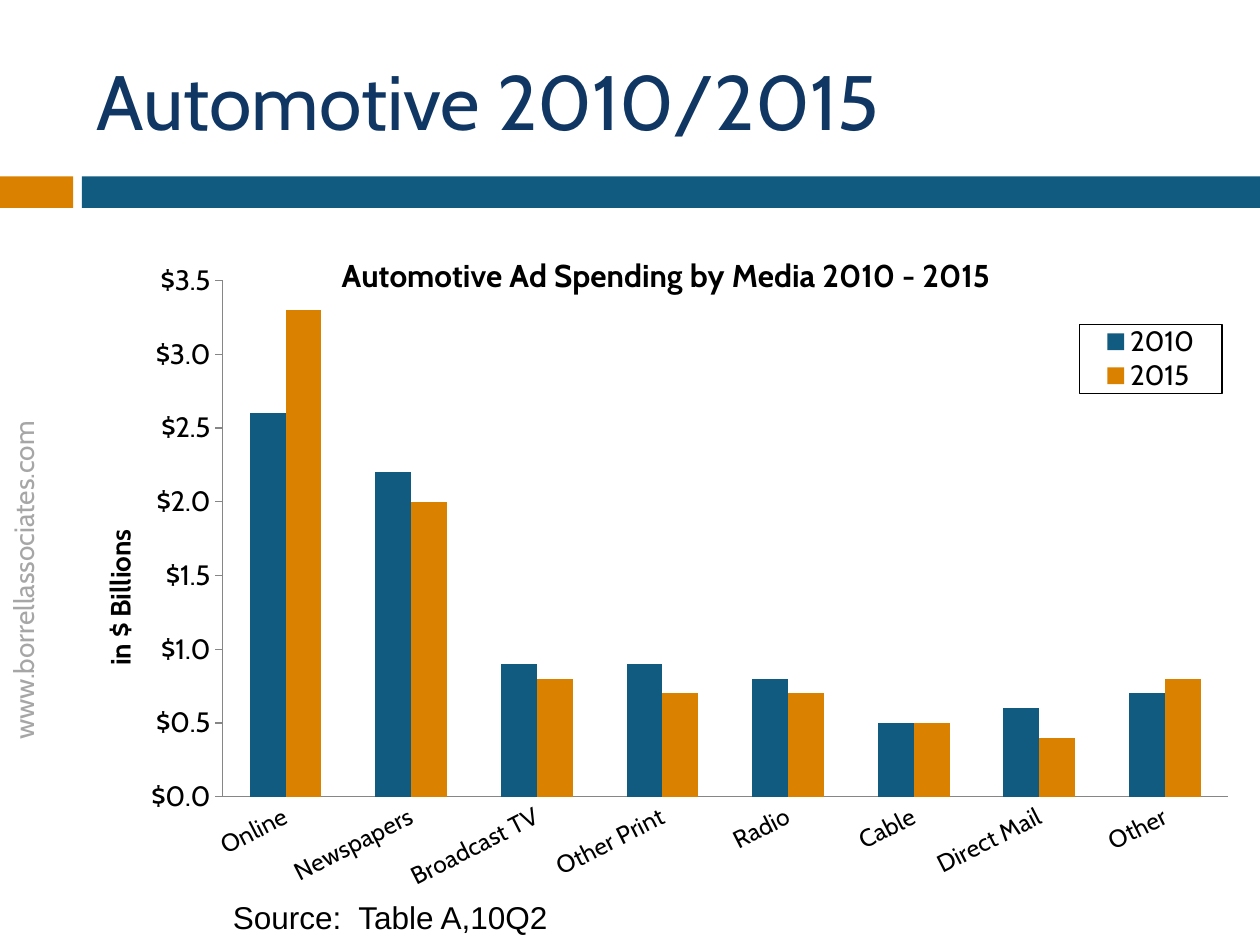
from dataclasses import dataclass

from lxml import etree
from pptx import Presentation
from pptx import util as u
from pptx.chart import data as chart_data
from pptx.dml.color import RGBColor
from pptx.enum import chart as ch, shapes, text
from pptx.oxml import ns

WIDTH, HEIGHT = 10, 7.5
FONT = "Cabin"
COLORS = {"blue": "125B80", "orange": "DA8200", "navy": "103763",
          "grey": "A6A6A6", "axis": "868686", "black": "000000"}

MEDIA = ["Online", "Newspapers", "Broadcast TV", "Other Print",
         "Radio", "Cable", "Direct Mail", "Other"]
SPENDING = {"2010": ("blue", [2.6, 2.2, 0.9, 0.9, 0.8, 0.5, 0.6, 0.7]),
            "2015": ("orange", [3.3, 2.0, 0.8, 0.7, 0.7, 0.5, 0.4, 0.8])}


@dataclass(frozen=True)
class Box:
    """A frame given as shares of the slide's width and height."""
    left: float
    top: float
    width: float
    height: float

    def emu(self):
        sides = (self.left * WIDTH, self.top * HEIGHT,
                 self.width * WIDTH, self.height * HEIGHT)
        return [u.Inches(side) for side in sides]


@dataclass(frozen=True)
class Band:
    box: Box
    color: str


@dataclass(frozen=True)
class Label:
    wording: str
    box: Box
    size: int
    color: str
    font: str = FONT
    rotation: int = 0
    anchor: text.MSO_ANCHOR = text.MSO_ANCHOR.TOP


BAND_TOP, BAND_HEIGHT = 1.4 / HEIGHT, 0.25 / HEIGHT
BANDS = [Band(Box(0, BAND_TOP, 0.058, BAND_HEIGHT), "orange"),
         Band(Box(0.065, BAND_TOP, 0.935, BAND_HEIGHT), "blue")]
LABELS = [
    Label("www.borrellassociates.com",
          Box(-0.187, 3.73 / HEIGHT, 0.411, 0.37 / HEIGHT), 16, "grey", rotation=270),
    Label("Automotive 2010/2015",
          Box(0.067, 0.25 / HEIGHT, 0.892, 1.08 / HEIGHT), 44, "navy",
          anchor=text.MSO_ANCHOR.MIDDLE),
    Label("Source:  Table A,10Q2",
          Box(0.175, 7.08 / HEIGHT, 0.583, 0.42 / HEIGHT), 18, "black", font="Arial"),
]
CHART_BOX = Box(0.067, 1.75 / HEIGHT, 0.908, 5.49 / HEIGHT)


def rgb(name: str) -> RGBColor:
    return RGBColor.from_string(COLORS[name])


def style(font, size: float, color: str = "black", name: str = FONT,
          bold: bool = False) -> None:
    font.size, font.name, font.bold = u.Pt(size), name, bold
    font.color.rgb = rgb(color)


def draw_band(slide, band: Band) -> None:
    bar = slide.shapes.add_shape(shapes.MSO_SHAPE.RECTANGLE, *band.box.emu())
    bar.shadow.inherit = False
    bar.fill.solid()
    bar.fill.fore_color.rgb = rgb(band.color)
    bar.line.fill.background()


def draw_label(slide, label: Label) -> None:
    holder = slide.shapes.add_textbox(*label.box.emu())
    holder.rotation = label.rotation
    frame = holder.text_frame
    frame.word_wrap = True
    frame.vertical_anchor = label.anchor
    run = frame.paragraphs[0].add_run()
    run.text = label.wording
    style(run.font, label.size, label.color, label.font)


def place(element, following: tuple, inner: bool = False, **shares: float) -> None:
    """Fix a chart part at shares (x, y, w, h) of the chart's frame."""
    for old in element.findall(ns.qn("c:layout")):
        element.remove(old)
    layout = etree.Element(ns.qn("c:layout"))
    manual = etree.SubElement(layout, ns.qn("c:manualLayout"))
    if inner:
        etree.SubElement(manual, ns.qn("c:layoutTarget")).set("val", "inner")
    for side in ("x", "y"):
        etree.SubElement(manual, ns.qn(f"c:{side}Mode")).set("val", "edge")
    for side, share in shares.items():
        etree.SubElement(manual, ns.qn(f"c:{side}")).set("val", str(share))
    tags = [ns.qn(tag) for tag in following]
    successor = next((child for child in element if child.tag in tags), None)
    if successor is None:
        element.append(layout)
    else:
        successor.addprevious(layout)


def write_title(title, wording: str, size: int, x: float, y: float) -> None:
    run = title.text_frame.paragraphs[0].add_run()
    run.text = wording
    style(run.font, size, bold=True)
    place(title._element, ("c:overlay", "c:spPr", "c:txPr"), x=x, y=y)


def style_axis(axis, size: int, tick) -> None:
    axis.has_major_gridlines = False
    axis.major_tick_mark = tick
    axis.minor_tick_mark = ch.XL_TICK_MARK.NONE
    axis.format.line.color.rgb = rgb("axis")
    axis.format.line.width = u.Pt(0.75)
    style(axis.tick_labels.font, size)


def draw_chart(slide) -> None:
    spending = chart_data.CategoryChartData(number_format='"$"#,##0.0')
    spending.categories = MEDIA
    for year, (_, billions) in SPENDING.items():
        spending.add_series(year, billions)
    chart = slide.shapes.add_chart(ch.XL_CHART_TYPE.COLUMN_CLUSTERED,
                                   *CHART_BOX.emu(), spending).chart
    style(chart.font, 10)
    place(chart._chartSpace.chart.plotArea, ("c:barChart",), inner=True,
          x=0.121, y=0.087, w=0.879, h=0.746)

    # Columns
    plot = chart.plots[0]
    plot.vary_by_categories = False
    plot.gap_width, plot.overlap = 150, 0
    for series, (color, _) in zip(plot.series, SPENDING.values()):
        series.format.fill.solid()
        series.format.fill.fore_color.rgb = rgb(color)

    # Axes
    media_axis, dollar_axis = chart.category_axis, chart.value_axis
    style_axis(media_axis, 14, ch.XL_TICK_MARK.NONE)
    media_axis._element.txPr.bodyPr.set("rot", str(-27 * 60000))
    style_axis(dollar_axis, 16, ch.XL_TICK_MARK.OUTSIDE)
    dollar_axis.minimum_scale, dollar_axis.maximum_scale = 0, 3.5
    dollar_axis.major_unit = 0.5
    dollar_axis.tick_labels.number_format = '"$"#,##0.0'
    dollar_axis.tick_labels.number_format_is_linked = False

    # Titles
    write_title(chart.chart_title, "Automotive Ad Spending by Media 2010 - 2015",
                18, x=0.22, y=0.04)
    write_title(dollar_axis.axis_title, "in $ Billions", 16, x=0.01, y=0.44)
    dollar_axis.axis_title.text_frame._txBody.bodyPr.set("rot", str(-90 * 60000))

    # Legend
    chart.has_legend = True
    legend = chart.legend
    legend.position = ch.XL_LEGEND_POSITION.RIGHT
    legend.include_in_layout = False
    style(legend.font, 16)
    place(legend._element, ("c:overlay", "c:spPr", "c:txPr"),
          x=0.87, y=0.15, w=0.125, h=0.1)
    border = etree.Element(ns.qn("c:spPr"))
    line = etree.SubElement(border, ns.qn("a:ln"), w=str(u.Pt(0.75)))
    fill = etree.SubElement(line, ns.qn("a:solidFill"))
    etree.SubElement(fill, ns.qn("a:srgbClr"), val=COLORS["black"])
    legend._element.find(ns.qn("c:txPr")).addprevious(border)


def main() -> None:
    deck = Presentation()
    deck.slide_width, deck.slide_height = u.Inches(WIDTH), u.Inches(HEIGHT)
    slide = deck.slides.add_slide(deck.slide_layouts[6])
    for band in BANDS:
        draw_band(slide, band)
    draw_chart(slide)
    for label in LABELS:
        draw_label(slide, label)
    deck.save("out.pptx")


if __name__ == "__main__":
    main()
